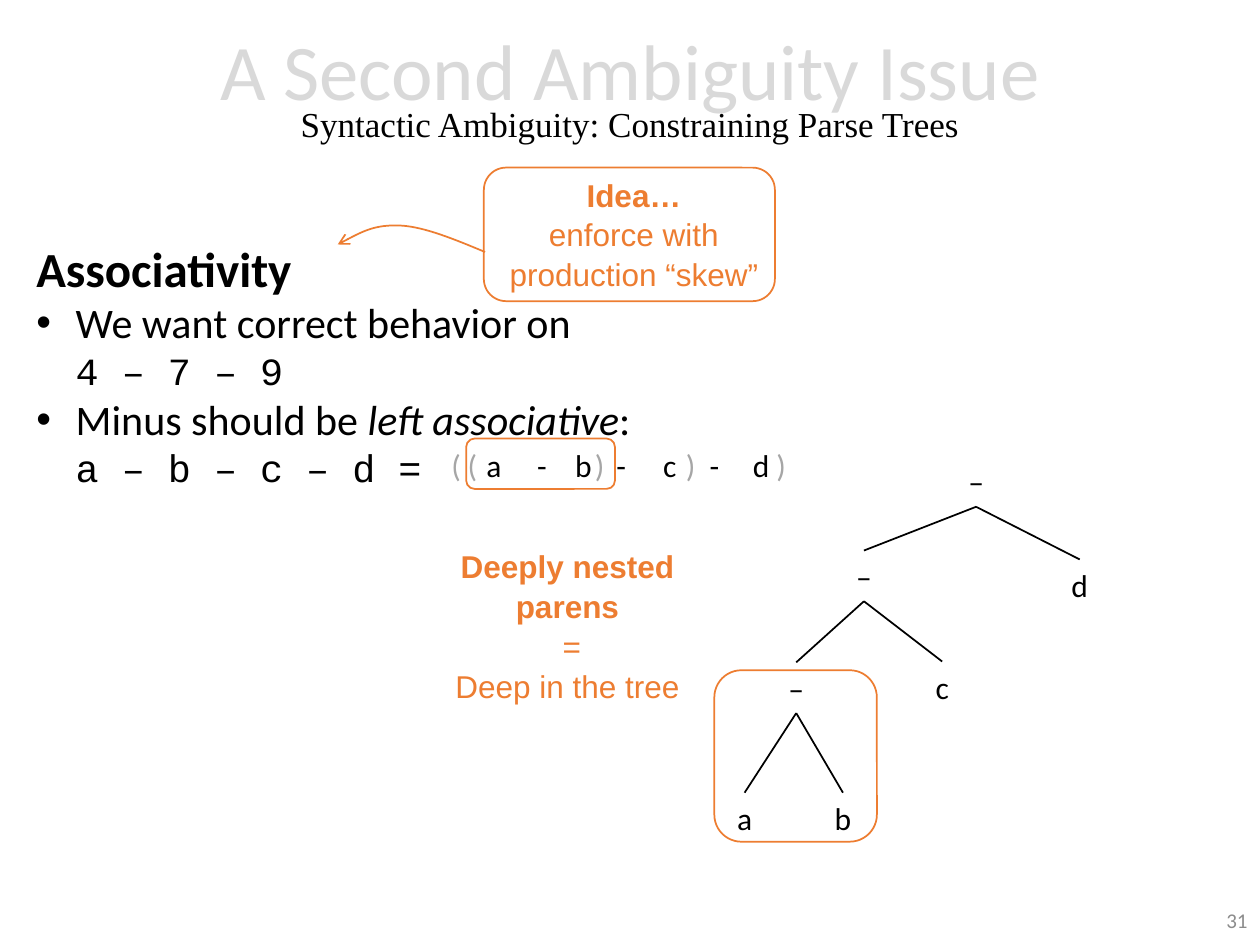
from typing import NamedTuple

from lxml.etree import SubElement
from pptx import Presentation
from pptx.dml.color import RGBColor
from pptx.enum.shapes import MSO_CONNECTOR as CONN, MSO_SHAPE as SHAPE
from pptx.enum.text import MSO_ANCHOR as ANCHOR, MSO_AUTO_SIZE as AUTO, PP_ALIGN as ALIGN
from pptx.oxml.ns import qn
from pptx.util import Pt

BLACK = RGBColor(0x00, 0x00, 0x00)
WHITE = RGBColor(0xFF, 0xFF, 0xFF)
ORANGE = RGBColor(0xED, 0x7D, 0x31)
PALE = RGBColor(0xD9, 0xD9, 0xD9)
GRAY = RGBColor(0xA6, 0xA6, 0xA6)
NUMBER_GRAY = RGBColor(0x8C, 0x8C, 0x8C)
LABEL_W, LABEL_H = 24, 29
TOKEN_TOP = 251.3


class Run(NamedTuple):
    text: str
    size: float
    font: str = "Calibri"
    color: RGBColor = BLACK
    bold: bool = False
    italic: bool = False


class Box(NamedTuple):
    left: float
    top: float
    width: float
    height: float


class Label(NamedTuple):
    text: str
    x: float
    top: float
    color: RGBColor = BLACK


def add_run(p, run: Run) -> None:
    r = p.add_run()
    r.text = run.text
    r.font.size = Pt(run.size)
    r.font.name = run.font
    r.font.bold = run.bold
    r.font.italic = run.italic
    r.font.color.rgb = run.color


def add_text(s, box: Box, lines: list[list[Run]], align=ALIGN.LEFT,
             anchor=ANCHOR.TOP, wrap: bool = True, spacing: float = 1.0):
    tf = s.shapes.add_textbox(*map(Pt, box)).text_frame
    tf.word_wrap = wrap
    tf.auto_size = AUTO.NONE
    tf.vertical_anchor = anchor
    for i, runs in enumerate(lines):
        p = tf.paragraphs[0] if i == 0 else tf.add_paragraph()
        p.alignment = align
        p.line_spacing = spacing
        for run in runs:
            add_run(p, run)
    return tf


def add_label(s, label: Label) -> None:
    box = Box(label.x - LABEL_W / 2, label.top, LABEL_W, LABEL_H)
    add_text(s, box, [[Run(label.text, 18, color=label.color)]], ALIGN.CENTER, wrap=False)


def add_note(s, box: Box, head: str, *rest: str) -> None:
    lines = [[Run(head, 18, "Arial", ORANGE, bold=True)]]
    lines += [[Run(text, 18, "Arial", ORANGE)] for text in rest]
    add_text(s, box, lines, ALIGN.CENTER, spacing=1.05)


def add_frame(s, box: Box, filled: bool = False) -> None:
    sp = s.shapes.add_shape(SHAPE.ROUNDED_RECTANGLE, *map(Pt, box))
    sp.shadow.inherit = False
    if filled:
        sp.fill.solid()
        sp.fill.fore_color.rgb = WHITE
    else:
        sp.fill.background()
    sp.line.color.rgb = ORANGE
    sp.line.width = Pt(1)


def add_edge(s, parent: Label, child: Label) -> None:
    ends = (parent.x, parent.top + LABEL_H, child.x, child.top)
    cx = s.shapes.add_connector(CONN.STRAIGHT, *map(Pt, ends))
    cx.line.color.rgb = BLACK
    cx.line.width = Pt(1)
    SubElement(cx._element.spPr, qn("a:effectLst"))


def add_curved_arrow(s, points: list[tuple[float, float]]) -> None:
    start, *rest = [(Pt(x), Pt(y)) for x, y in points]
    builder = s.shapes.build_freeform(*start, scale=1.0)
    builder.add_line_segments(rest, close=False)
    sp = builder.convert_to_shape()
    sp.shadow.inherit = False
    sp.fill.background()
    sp.line.color.rgb = ORANGE
    sp.line.width = Pt(1)
    SubElement(sp.line._get_or_add_ln(), qn("a:tailEnd"), type="arrow")
    outline = next(sp._element.iter(qn("a:path")))
    segments = outline.findall(qn("a:lnTo"))
    for i in range(0, len(segments), 3):
        curve = SubElement(outline, qn("a:cubicBezTo"))
        for segment in segments[i:i + 3]:
            curve.append(segment[0])
            outline.remove(segment)


def add_bullet(p) -> None:
    pPr = p._p.get_or_add_pPr()
    pPr.set("marL", str(Pt(22.5)))
    pPr.set("indent", str(-Pt(22.5)))
    SubElement(pPr, qn("a:buFont"), typeface="Arial")
    SubElement(pPr, qn("a:buChar"), char="•")


def add_body(s) -> None:
    tf = add_text(s, Box(13.7, 132.5, 360, 174.2), [
        [Run("Associativity", 28, bold=True)],
        [Run("We want correct behavior on", 24)],
        [Run("Minus should be ", 24), Run("left associative", 24, italic=True), Run(":", 24)],
    ])
    for p, code in zip(tf.paragraphs[1:], ("4 – 7 – 9", "a – b – c – d =")):
        add_bullet(p)
        p.add_line_break()
        add_run(p, Run(code, 22, "Courier New"))


def add_tree(s) -> None:
    root, upper, lower = Label("–", 557.8, 260.6), Label("–", 493.7, 314.6), Label("–", 455, 378.5)
    a, b = Label("a", 425.5, 453), Label("b", 481.7, 453)
    c, d = Label("c", 538.4, 378), Label("d", 617, 319.7)
    for node in (a, b, c, d, lower, upper, root):
        add_label(s, node)
    for parent, left, right in ((root, upper, d), (upper, lower, c), (lower, a, b)):
        add_edge(s, parent, left)
        add_edge(s, parent, right)


def main() -> None:
    prs = Presentation()
    prs.slide_width, prs.slide_height = Pt(720), Pt(540)
    s = prs.slides.add_slide(prs.slide_layouts[6])

    add_text(s, Box(558, 511.2, 162, 28.8), [[Run("31", 12, color=NUMBER_GRAY)]],
             ALIGN.RIGHT, ANCHOR.MIDDLE)
    add_text(s, Box(0, 2.2, 720, 104.4), [
        [Run("A Second Ambiguity Issue", 45, color=PALE)],
        [Run("Syntactic Ambiguity: Constraining Parse Trees", 20, "Times New Roman")],
    ], ALIGN.CENTER, ANCHOR.MIDDLE, spacing=0.7)

    add_frame(s, Box(276.5, 95.8, 166.3, 76.3), filled=True)
    add_note(s, Box(275.8, 95.8, 172.8, 72.7), "Idea…", " enforce with ", "production “skew”")
    add_curved_arrow(s, [(277.2, 144), (259.9, 136.8), (242.6, 129.6), (229, 128.9),
                         (214.6, 128.2), (203.8, 133.9), (193, 139.7)])
    add_body(s)

    centers = (260.6, 270, 282.2, 309.6, 333.4, 342.7, 355, 382.7, 394.6, 408.2, 434.9, 446.4)
    for text, x in zip("((a-b)-c)-d)", centers):
        add_label(s, Label(text, x, TOKEN_TOP, GRAY if text in "()" else BLACK))

    add_tree(s)
    add_frame(s, Box(408.2, 383, 92.9, 98))
    add_note(s, Box(228.2, 308.2, 192.2, 72.7), "Deeply nested parens", " =", "Deep in the tree")
    add_frame(s, Box(266.4, 250.6, 85, 28.8))

    prs.save("out.pptx")


if __name__ == "__main__":
    main()
